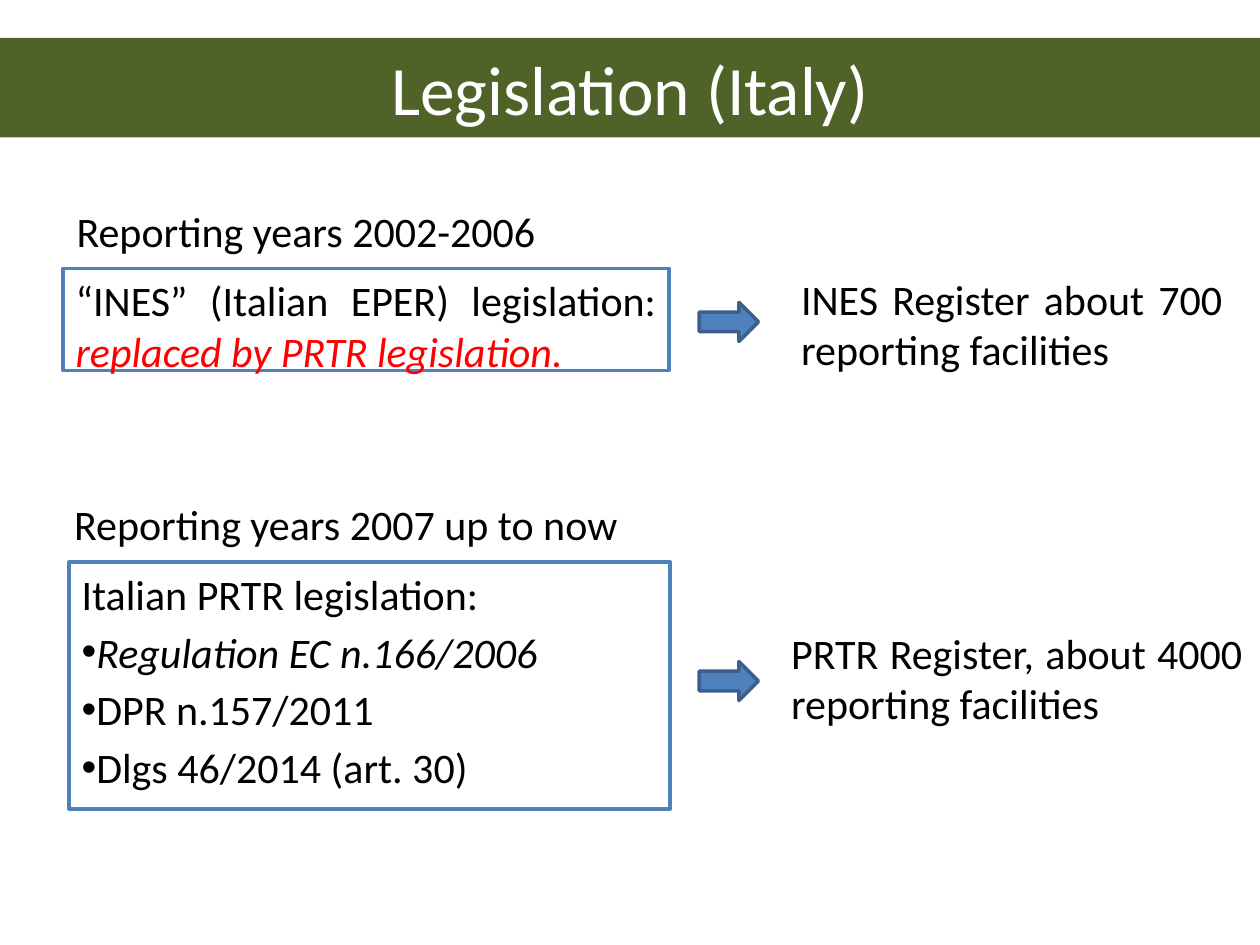
from lxml import etree
from pptx import Presentation
from pptx.dml.color import RGBColor
from pptx.enum.shapes import MSO_SHAPE
from pptx.enum.text import MSO_ANCHOR, MSO_AUTO_SIZE, PP_ALIGN
from pptx.oxml.ns import qn
from pptx.util import Inches, Pt

RECTANGLE, ARROW = MSO_SHAPE.RECTANGLE, MSO_SHAPE.RIGHT_ARROW
TOP, MIDDLE = MSO_ANCHOR.TOP, MSO_ANCHOR.MIDDLE
GROW, FIXED = MSO_AUTO_SIZE.SHAPE_TO_FIT_TEXT, MSO_AUTO_SIZE.NONE
JUSTIFY, CENTER = PP_ALIGN.JUSTIFY, PP_ALIGN.CENTER

COLORS = {
    "banner": "4F6228", "white": "FFFFFF", "text": "000000",
    "replaced": "FF0000", "accent": "4F81BD", "arrow_edge": "3A5F8C",
}
WIDTH, HEIGHT = 10, 7.5
ARROW_LEFT, ARROW_WIDTH, ARROW_HEIGHT = 5.55, 0.47, 0.31
FRAME = {"word_wrap": True, "auto_size": GROW, "vertical_anchor": TOP}
BODY_FONT = {"name": "Calibri", "size": Pt(24)}
BODY_PARAGRAPH = {"alignment": JUSTIFY, "space_before": Pt(4.3)}


def color(key):
    """Return the palette colour for a key."""
    return RGBColor.from_string(COLORS[key])


def apply_format(target, values):
    """Set each attribute of the target from a dict."""
    for attribute, value in values.items():
        setattr(target, attribute, value)


def place(shape, left, top, width, height):
    """Position a shape by lengths in inches."""
    apply_format(shape, {
        "left": Inches(left), "top": Inches(top),
        "width": Inches(width), "height": Inches(height),
    })


def paint(shape, fill, edge):
    """Give a shape a solid fill and a two-point outline."""
    shape.shadow.inherit = False
    shape.fill.solid()
    shape.fill.fore_color.rgb = color(fill)
    shape.line.color.rgb = color(edge)
    shape.line.width = Pt(2)


def set_bullet(paragraph, bulleted):
    """Remove the indent and turn the bullet on or off."""
    properties = paragraph._p.get_or_add_pPr()
    properties.set("marL", "0")
    properties.set("indent", "0")
    if bulleted:
        font = etree.SubElement(properties, qn("a:buFont"))
        font.set("typeface", "Arial")
        etree.SubElement(properties, qn("a:buChar")).set("char", "•")
    else:
        etree.SubElement(properties, qn("a:buNone"))


def write(shape, paragraphs):
    """Fill a shape with (bulleted, runs) paragraphs."""
    frame = shape.text_frame
    apply_format(frame, FRAME)
    for index, (bulleted, runs) in enumerate(paragraphs):
        paragraph = frame.add_paragraph() if index else frame.paragraphs[0]
        apply_format(paragraph, BODY_PARAGRAPH)
        set_bullet(paragraph, bulleted)
        for words, ink, italic in runs:
            run = paragraph.add_run()
            run.text = words
            apply_format(run.font, BODY_FONT | {"italic": italic})
            run.font.color.rgb = color(ink)


def add_banner(title, words):
    """Turn the title placeholder into the full-width banner."""
    place(title, 0, 0.3, WIDTH, 0.79)
    title.fill.solid()
    title.fill.fore_color.rgb = color("banner")
    frame = title.text_frame
    frame.text = words
    apply_format(frame, {"auto_size": FIXED, "vertical_anchor": MIDDLE})
    heading = frame.paragraphs[0]
    heading.alignment = CENTER
    apply_format(heading.runs[0].font, {"name": "Calibri", "size": Pt(39.6)})
    heading.runs[0].font.color.rgb = color("white")


def add_legislation(box, bounds, paragraphs):
    """Outline a box and list the legislation in it."""
    place(box, *bounds)
    paint(box, "white", "accent")
    write(box, paragraphs)


def add_label(slide, bounds, words):
    """Add a plain text box."""
    label = slide.shapes.add_textbox(*map(Inches, bounds))
    write(label, [(False, [(words, "text", False)])])


def add_arrow(slide, top):
    """Add an arrow from the legislation to its register."""
    size = (ARROW_LEFT, top, ARROW_WIDTH, ARROW_HEIGHT)
    arrow = slide.shapes.add_shape(ARROW, *map(Inches, size))
    paint(arrow, "accent", "arrow_edge")


def main():
    """Build the slide and save it."""
    deck = Presentation()
    deck.slide_width, deck.slide_height = Inches(WIDTH), Inches(HEIGHT)
    slide = deck.slides.add_slide(deck.slide_layouts[1])
    add_banner(slide.shapes.title, "Legislation (Italy)")

    add_legislation(slide.placeholders[1], (0.5, 2.13, 4.81, 0.91), [
        (False, [
            ("“INES” (Italian EPER) legislation: ", "text", False),
            ("replaced by PRTR legislation.", "replaced", True),
        ]),
    ])
    prtr_bounds = (0.55, 4.46, 4.77, 1.96)
    prtr = slide.shapes.add_shape(RECTANGLE, *map(Inches, prtr_bounds))
    add_legislation(prtr, prtr_bounds, [
        (False, [("Italian PRTR legislation:", "text", False)]),
        (True, [("Regulation EC n.166/2006", "text", True)]),
        (True, [("DPR n.157/2011", "text", False)]),
        (True, [("Dlgs 46/2014 (art. 30)", "text", False)]),
    ])

    for bounds, words in (
        ((6.26, 2.12, 3.54, 0.91), "INES Register about 700 reporting facilities"),
        ((6.18, 4.93, 3.78, 0.91), "PRTR Register, about 4000 reporting facilities"),
        ((0.51, 1.58, 9.26, 0.5), "Reporting years 2002-2006"),
        ((0.49, 3.91, 9.16, 0.5), "Reporting years 2007 up to now"),
    ):
        add_label(slide, bounds, words)
    for top in (2.4, 5.25):
        add_arrow(slide, top)
    deck.save("out.pptx")


if __name__ == "__main__":
    main()
